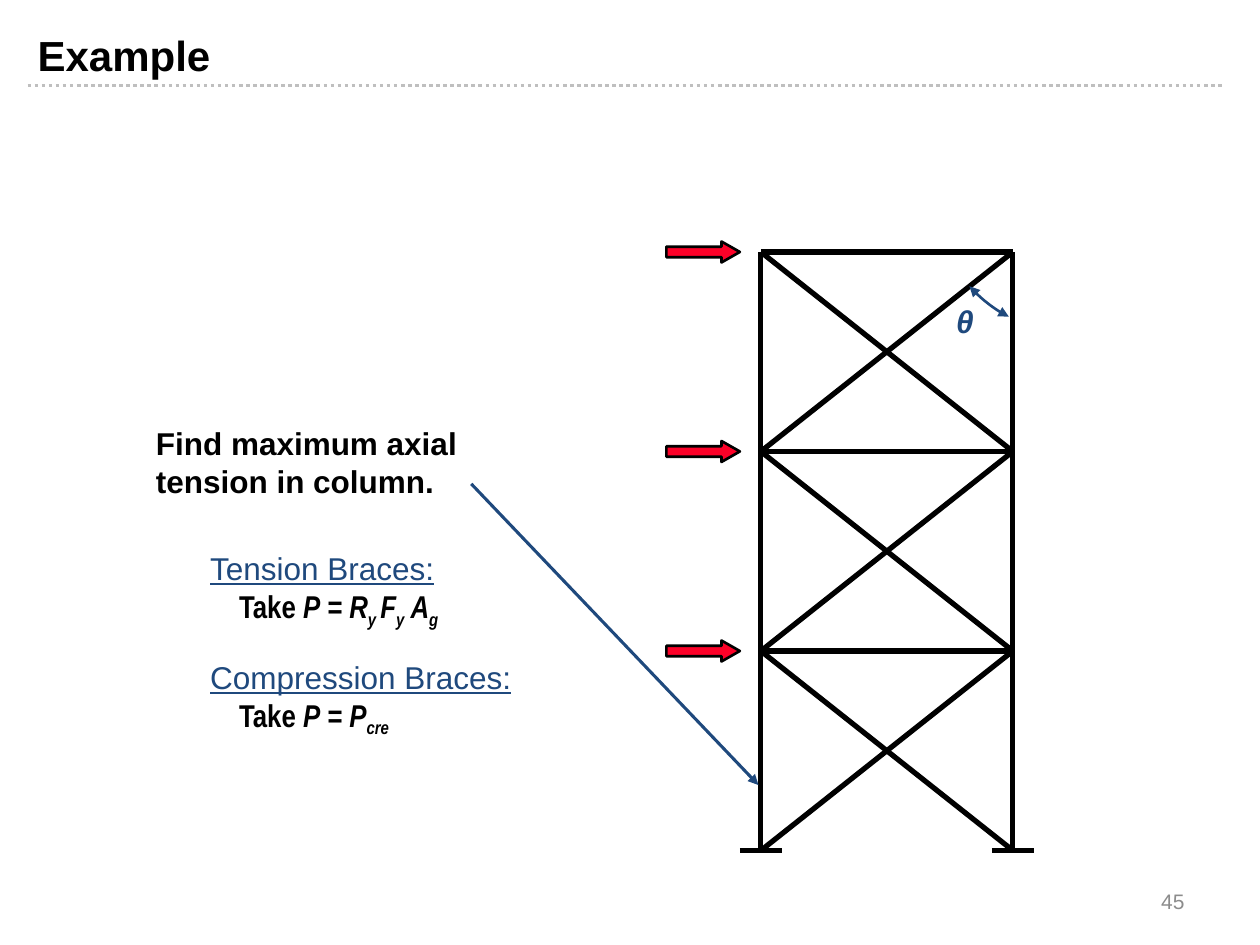
import pptx
import pptx.util
import pptx.dml.color
import pptx.enum.dml
import pptx.enum.shapes
import pptx.enum.text
import pptx.oxml
import pptx.oxml.ns

Pt = pptx.util.Pt
RGBColor = pptx.dml.color.RGBColor
ALIGN = pptx.enum.text.PP_ALIGN
ANCHOR = pptx.enum.text.MSO_ANCHOR

BLACK = RGBColor(0x00, 0x00, 0x00)
BLUE = RGBColor(0x1F, 0x49, 0x7D)
RED = RGBColor(0xFC, 0x01, 0x28)
RULE_GRAY = RGBColor(0xBF, 0xBF, 0xBF)
NUMBER_GRAY = RGBColor(0x8C, 0x8C, 0x8C)


def add_line(s, x1, y1, x2, y2, width=3, color=BLACK):
    c = s.shapes.add_connector(pptx.enum.shapes.MSO_CONNECTOR.STRAIGHT,
                               Pt(x1), Pt(y1), Pt(x2), Pt(y2))
    c.line.width = Pt(width)
    c.line.color.rgb = color
    pptx.oxml.ns.qn("a:effectLst")
    c._element.spPr.append(pptx.oxml.parse_xml(
        "<a:effectLst %s/>" % pptx.oxml.ns.nsdecls("a")))
    return c


def add_arrowheads(line, *ends):
    """Put triangles on the named ends, headEnd before tailEnd."""
    for end in ends:
        line._get_or_add_ln().append(pptx.oxml.parse_xml(
            '<a:%s %s type="triangle"/>' % (end, pptx.oxml.ns.nsdecls("a"))))


def style_run(r, size, color=BLACK, font="Arial", bold=False, italic=False):
    r.font.size = Pt(size)
    r.font.name = font
    r.font.color.rgb = color
    r.font.bold = bold
    r.font.italic = italic


def add_text(s, x, y, w, h, text, size, color=BLACK, align=ALIGN.LEFT,
             anchor=ANCHOR.TOP, **style):
    tf = s.shapes.add_textbox(Pt(x), Pt(y), Pt(w), Pt(h)).text_frame
    tf.word_wrap = True
    tf.vertical_anchor = anchor
    p = tf.paragraphs[0]
    p.text = text
    p.alignment = align
    style_run(p.runs[0], size, color, **style)
    return tf


def add_title(s, x, y, w, h):
    tf = add_text(s, x, y, w, h, "Example", 24, bold=True)
    tf.margin_top = Pt(5.5)
    rule = add_line(s, 15.84, 48.96, 699.84, 48.96, 2, RULE_GRAY)
    rule.line.dash_style = pptx.enum.dml.MSO_LINE.ROUND_DOT


def add_frame(s, left, top, width, story, stories=3):
    """Braced frame with a load at each floor and a support under each column."""
    right = left + width
    for i in range(stories):
        y1 = top + i * story
        y2 = y1 + story
        for x1, ya, x2, yb in ((left, y2, left, y1), (right, y2, right, y1),
                               (left, y1, right, y1), (left, y1, right, y2),
                               (right, y1, left, y2)):
            add_line(s, x1, ya, x2, yb)
        add_load(s, left - 54, y1 - 6, 42, 12)
    base = top + stories * story
    for x in (left, right):
        add_line(s, x - 12, base, x + 12, base)


def add_load(s, x, y, w, h):
    sp = s.shapes.add_shape(pptx.enum.shapes.MSO_SHAPE.RIGHT_ARROW,
                            Pt(x), Pt(y), Pt(w), Pt(h))
    sp.adjustments[0] = 0.5
    sp.adjustments[1] = 0.875
    sp.shadow.inherit = False
    sp.fill.solid()
    sp.fill.fore_color.rgb = RED
    sp.line.color.rgb = BLACK
    sp.line.width = Pt(1.5)


def add_angle(s, x, y, w, h, steps=12):
    """Double-headed arc across the given box, with its label at the lower left."""
    curve = ((0, 0), (0.28, 0.4), (0.62, 0.76), (1, 1))
    points = []
    for i in range(steps + 1):
        t = i / steps
        weights = ((1 - t) ** 3, 3 * t * (1 - t) ** 2, 3 * t * t * (1 - t), t ** 3)
        u, v = (sum(k * c[axis] for k, c in zip(weights, curve)) for axis in (0, 1))
        points.append((Pt(x + u * w), Pt(y + v * h)))
    fb = s.shapes.build_freeform(*points[0])
    fb.add_line_segments(points[1:], close=False)
    sp = fb.convert_to_shape()
    sp.shadow.inherit = False
    sp.fill.background()
    sp.line.color.rgb = BLUE
    sp.line.width = Pt(1.5)
    add_arrowheads(sp.line, "headEnd", "tailEnd")
    add_text(s, x - 35.6, y + 5.6, 66, 28.8, "θ", 18, BLUE, ALIGN.CENTER,
             bold=True, italic=True)


def add_brace_rule(s, x, y, w, h, heading, symbols):
    """Underlined heading over a formula of (symbol, subscript) pairs."""
    tf = add_text(s, x, y, w, h, heading, 18, BLUE)
    tf.paragraphs[0].runs[0].font.underline = True
    p = tf.add_paragraph()
    p._p.get_or_add_pPr().set("marL", str(Pt(16.5)))
    parts = [("Take ", False, False)]
    for symbol, sub in symbols:
        parts += [(symbol, True, False), (sub, True, True)]
    for text, italic, lowered in parts:
        r = p.add_run()
        r.text = text
        style_run(r, 18, font="Arial Narrow", bold=True, italic=italic)
        if lowered:
            r.font._element.set("baseline", "-25000")


def add_instructions(s, x, y, w, h):
    add_text(s, x, y, w, h, "Find maximum axial tension in column.", 18, bold=True)
    rules = (("Tension Braces:", (("P = R", "y "), ("F", "y"), (" A", "g"))),
             ("Compression Braces:", (("P = P", "cre"),)))
    for i, (heading, symbols) in enumerate(rules):
        add_brace_rule(s, x + 31, y + 71.3 + 62 * i, 192, 51, heading, symbols)
    leader = add_line(s, 269.3, 276.5, 433.4, 448.6, 1.75, BLUE)
    add_arrowheads(leader.line, "tailEnd")


def main():
    prs = pptx.Presentation()
    prs.slide_width, prs.slide_height = Pt(720), Pt(540)
    s = prs.slides.add_slide(prs.slide_layouts[6])
    add_title(s, 14.4, 11.5, 646.5, 31.7)
    add_frame(s, 434.8, 144, 144, 114)
    add_angle(s, 554, 163.6, 22.5, 17.4)
    add_instructions(s, 82, 239, 209.5, 50.4)
    add_text(s, 516.2, 500.4, 167.8, 28.8, "45", 12, NUMBER_GRAY, ALIGN.RIGHT,
             ANCHOR.MIDDLE)
    prs.save("out.pptx")


if __name__ == "__main__":
    main()
